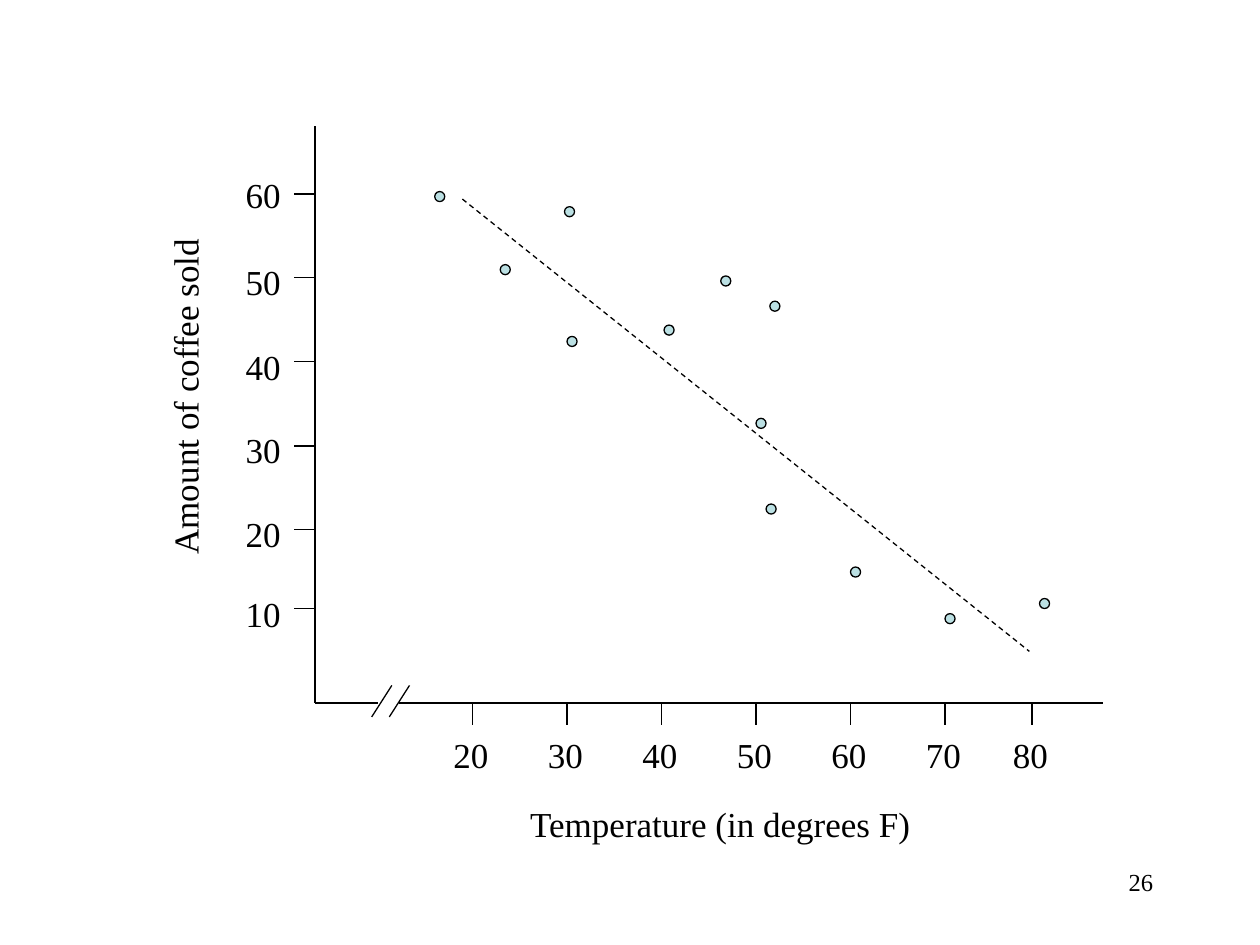
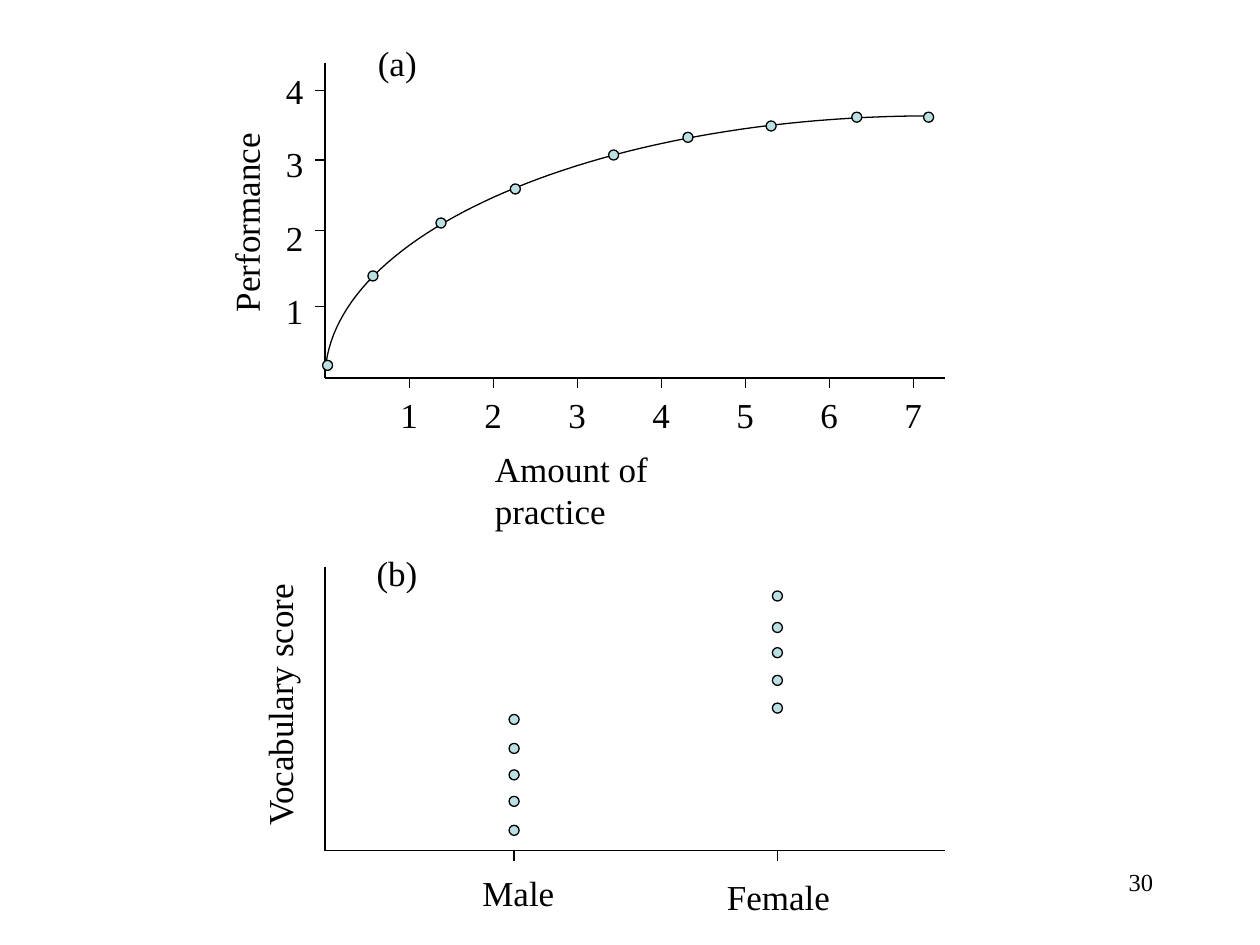
from dataclasses import dataclass
from typing import NamedTuple

from lxml.etree import SubElement
from pptx import Presentation
from pptx.dml.color import RGBColor
from pptx.enum.dml import MSO_LINE
from pptx.enum.shapes import MSO_CONNECTOR, MSO_SHAPE
from pptx.enum.text import MSO_AUTO_SIZE, PP_ALIGN
from pptx.oxml.ns import qn
from pptx.slide import Slide
from pptx.util import Inches, Pt


@dataclass(frozen=True)
class Theme:
    ink: RGBColor = RGBColor(0x00, 0x00, 0x00)
    dot: RGBColor = RGBColor(0xBB, 0xE0, 0xE3)
    font: str = "Times New Roman"
    label_size: int = 20
    number_size: int = 14
    line_width: float = 0.75
    dot_size: float = 0.08
    label_height: float = 0.43


THEME = Theme()


class Point(NamedTuple):
    x: float
    y: float


class Segment(NamedTuple):
    start: Point
    end: Point
    dashed: bool = False


class Label(NamedTuple):
    text: str
    left: float
    top: float
    width: float
    rotation: int = 0


@dataclass(frozen=True)
class Plot:
    segments: list[Segment]
    labels: list[Label]
    dots: list[Point]


def draw_segment(slide: Slide, segment: Segment) -> None:
    start, end = segment.start, segment.end
    connector = slide.shapes.add_connector(
        MSO_CONNECTOR.STRAIGHT, Inches(start.x), Inches(start.y), Inches(end.x), Inches(end.y)
    )
    connector.line.color.rgb = THEME.ink
    connector.line.width = Pt(THEME.line_width)
    if segment.dashed:
        connector.line.dash_style = MSO_LINE.DASH
    SubElement(connector._element.spPr, qn("a:effectLst"))


def draw_text(slide: Slide, label: Label, height: float, size: int, wrap: bool, align: PP_ALIGN) -> None:
    shape = slide.shapes.add_textbox(
        Inches(label.left), Inches(label.top), Inches(label.width), Inches(height)
    )
    shape.rotation = label.rotation
    frame = shape.text_frame
    frame.word_wrap = wrap
    frame.auto_size = MSO_AUTO_SIZE.NONE if wrap else MSO_AUTO_SIZE.SHAPE_TO_FIT_TEXT
    paragraph = frame.paragraphs[0]
    paragraph.alignment = align
    run = paragraph.add_run()
    run.text = label.text
    run.font.name = THEME.font
    run.font.size = Pt(size)
    run.font.color.rgb = THEME.ink


def draw_dot(slide: Slide, corner: Point) -> None:
    size = Inches(THEME.dot_size)
    shape = slide.shapes.add_shape(MSO_SHAPE.OVAL, Inches(corner.x), Inches(corner.y), size, size)
    shape.shadow.inherit = False
    shape.fill.solid()
    shape.fill.fore_color.rgb = THEME.dot
    shape.line.color.rgb = THEME.ink
    shape.line.width = Pt(THEME.line_width)


def draw_curve(slide: Slide, controls: list[Point], steps: int = 60) -> None:
    points = []
    for step in range(steps + 1):
        t = step / steps
        weights = ((1 - t) ** 3, 3 * t * (1 - t) ** 2, 3 * t**2 * (1 - t), t**3)
        x = sum(weight * control.x for weight, control in zip(weights, controls))
        y = sum(weight * control.y for weight, control in zip(weights, controls))
        points.append((Inches(x), Inches(y)))
    builder = slide.shapes.build_freeform(*points[0])
    builder.add_line_segments(points[1:], close=False)
    shape = builder.convert_to_shape()
    shape.shadow.inherit = False
    shape.fill.background()
    shape.line.color.rgb = THEME.ink
    shape.line.width = Pt(THEME.line_width)


def draw_plot(slide: Slide, plot: Plot) -> None:
    for segment in plot.segments:
        draw_segment(slide, segment)
    for label in plot.labels:
        draw_text(slide, label, THEME.label_height, THEME.label_size, False, PP_ALIGN.LEFT)
    for dot in plot.dots:
        draw_dot(slide, dot)


def draw_slide_number(slide: Slide, number: int) -> None:
    draw_text(slide, Label(str(number), 7.17, 6.83, 2.08), 0.5, THEME.number_size, True, PP_ALIGN.RIGHT)


def ticks_below(xs: list[float], axis_y: float, length: float) -> list[Segment]:
    return [Segment(Point(x, axis_y), Point(x, axis_y + length)) for x in xs]


def ticks_left(ys: list[float], axis_x: float, length: float) -> list[Segment]:
    return [Segment(Point(axis_x, y), Point(axis_x - length, y)) for y in ys]


def axes(origin: Point, top: float, right: float) -> list[Segment]:
    return [Segment(Point(origin.x, top), origin), Segment(origin, Point(right, origin.y))]


def coffee_plot() -> Plot:
    origin = Point(2.5, 5.58)
    temperature_ticks = [3.75 + 0.75 * index for index in range(6)] + [8.19]
    sales_ticks = [1.54, 2.2, 2.87, 3.54, 4.2, 4.83]
    sales_label_tops = [1.33, 2.02, 2.69, 3.35, 4.02, 4.65]
    axis_lines = [
        Segment(Point(origin.x, 1), origin),
        Segment(origin, Point(3, origin.y)),
        Segment(Point(3.17, origin.y), Point(8.75, origin.y)),
    ]
    axis_break = [Segment(Point(x + 0.16, 5.44), Point(x, 5.69)) for x in (2.95, 3.09)]
    trend = Segment(Point(3.67, 1.58), Point(8.17, 5.17), dashed=True)
    return Plot(
        segments=axis_lines
        + axis_break
        + ticks_left(sales_ticks, origin.x, 0.17)
        + ticks_below(temperature_ticks, origin.y, 0.17)
        + [trend],
        labels=[Label(str(60 - 10 * index), 1.85, top, 0.48) for index, top in enumerate(sales_label_tops)]
        + [Label(str(20 + 10 * index), x - 0.25, 5.77, 0.48) for index, x in enumerate(temperature_ticks)]
        + [
            Label("Amount of coffee sold", 0.11, 2.93, 2.71, 270),
            Label("Temperature (in degrees F)", 4.11, 6.32, 3.23),
        ],
        dots=[
            Point(3.45, 1.52), Point(3.97, 2.1), Point(4.5, 2.67), Point(6.08, 4),
            Point(6.75, 4.5), Point(7.5, 4.87), Point(8.25, 4.75), Point(6, 3.32),
            Point(5.27, 2.58), Point(5.72, 2.19), Point(6.11, 2.39), Point(4.48, 1.64),
        ],
    )


def practice_plot() -> Plot:
    origin = Point(2.58, 3)
    practice_ticks = [3.25 + index * 2 / 3 for index in range(7)]
    performance_ticks = [0.72, 1.27, 1.83, 2.43]
    return Plot(
        segments=axes(origin, 0.5, 7.5)
        + ticks_left(performance_ticks, origin.x, 0.08)
        + ticks_below(practice_ticks, origin.y, 0.08),
        labels=[Label(str(4 - index), 2.17, 0.5 + index * 1.75 / 3, 0.34) for index in range(4)]
        + [Label(str(index + 1), x - 0.17, 3.07, 0.34) for index, x in enumerate(practice_ticks)]
        + [
            Label("Amount of practice", 3.83, 3.5, 2.36),
            Label("Performance", 1.14, 1.55, 1.62, 270),
            Label("(a)", 2.9, 0.28, 0.51),
        ],
        dots=[
            Point(2.56, 2.86), Point(2.92, 2.15), Point(3.46, 1.73),
            Point(4.05, 1.46), Point(4.83, 1.19), Point(5.42, 1.05),
            Point(6.08, 0.96), Point(6.76, 0.89), Point(7.33, 0.89),
        ],
    )


def vocabulary_plot() -> Plot:
    origin = Point(2.58, 6.75)
    scores = {
        4.04: [5.67, 5.9, 6.11, 6.32, 6.55],
        6.13: [4.69, 4.94, 5.14, 5.36, 5.58],
    }
    return Plot(
        segments=axes(origin, 4.5, 7.5) + ticks_below([4.08, 6.17], origin.y, 0.08),
        labels=[
            Label("(b)", 2.89, 4.33, 0.53),
            Label("Male", 3.73, 6.87, 0.77),
            Label("Female", 5.67, 6.9, 1.02),
            Label("Vocabulary score", 1.14, 5.36, 2.15, 270),
        ],
        dots=[Point(x, y) for x, ys in scores.items() for y in ys],
    )


def main() -> None:
    presentation = Presentation()
    presentation.slide_width = Inches(10)
    presentation.slide_height = Inches(7.5)
    blank = presentation.slide_layouts[6]

    coffee_slide = presentation.slides.add_slide(blank)
    draw_plot(coffee_slide, coffee_plot())
    draw_slide_number(coffee_slide, 26)

    learning_slide = presentation.slides.add_slide(blank)
    practice_curve = [Point(7.4, 0.92), Point(4.75, 0.92), Point(2.6, 1.85), Point(2.58, 2.99)]
    draw_curve(learning_slide, practice_curve)
    draw_plot(learning_slide, practice_plot())
    draw_plot(learning_slide, vocabulary_plot())
    draw_slide_number(learning_slide, 30)

    presentation.save("out.pptx")


if __name__ == "__main__":
    main()
